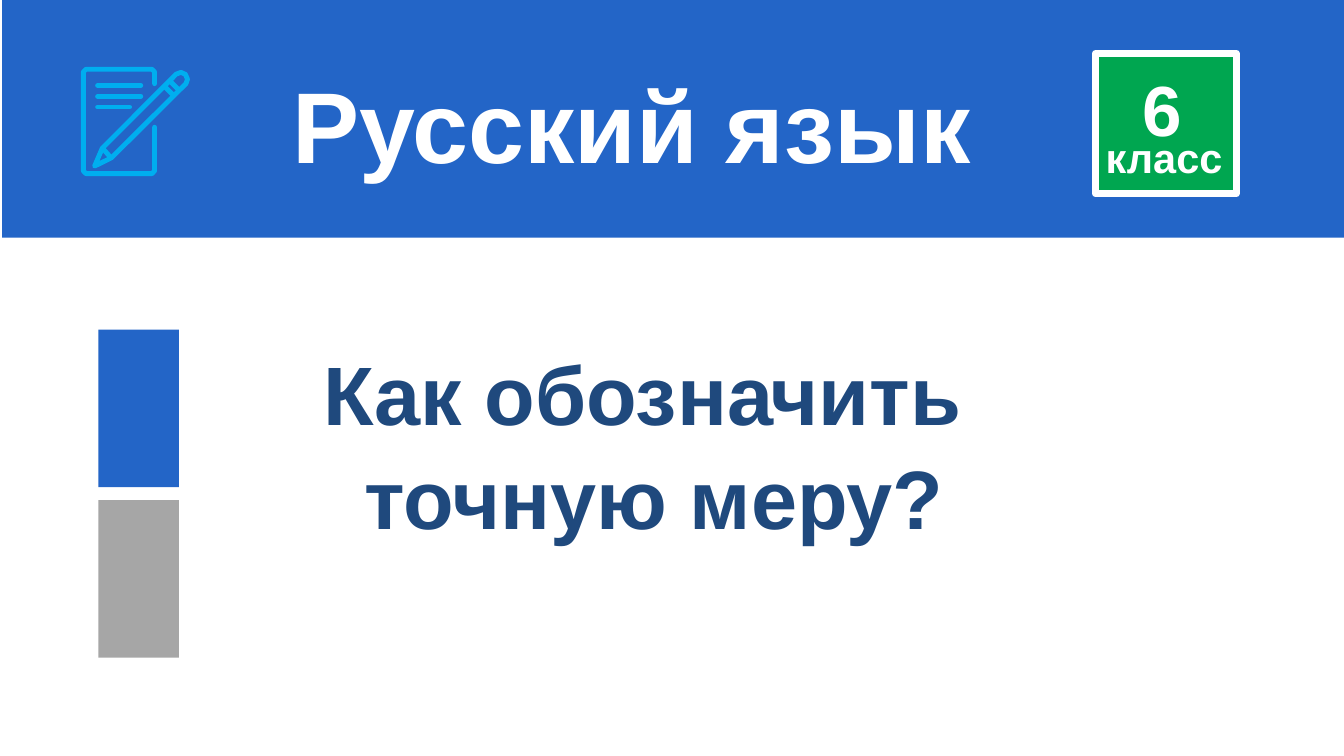
from lxml import etree
from pptx import Presentation
from pptx import util as u
from pptx.dml import color
from pptx.enum import shapes, text
from pptx.oxml import ns

Pt = u.Pt
WIDE, HIGH = 454.3, 255.6
BLUE, NAVY, GREEN, GREY = "2365C7", "1F497D", "00A650", "A6A6A6"
WHITE, CYAN = "FFFFFF", "00AEEF"

BLOCKS = [
    (0.7, 0, 453.6, 80.4, BLUE, None),
    (33.3, 111.5, 27.2, 53.3, BLUE, None),
    (33.3, 169.1, 27.2, 53.3, GREY, None),
    (370.3, 18.1, 47.6, 47.4, GREEN, WHITE),
]
TEXTS = [
    (76.3, 18, 265, 42.5, 34, WHITE, 1.1, [" Русский язык"]),
    (74.9, 113, 284.4, 69.1, 28, NAVY, 0, ["Как обозначить", " точную меру?"]),
    (383, 19.4, 19.6, 30.2, 24, WHITE, 1.2, ["6"]),
    (370.1, 42.5, 46.8, 18, 14, WHITE, 0.9, ["класс"]),
]
PAGE = [(52.3, 28.3), (52.3, 24.3), (51.4, 23.4), (29.1, 23.4), (28.2, 24.3),
        (28.2, 57.8), (29.1, 58.7), (51.4, 58.7), (52.3, 57.8), (52.3, 43)]
PENCIL = [(32, 56.2), (34.6, 50.2), (59.6, 25.1), (61.2, 24.5), (62.7, 25.2),
          (63.4, 26.8), (62.9, 28.3), (37.7, 53.4)]
BANDS = [(34.9, 50.4, 37.5, 53.3), (55.8, 29.4, 58.7, 32.3),
         (57.6, 27.6, 60.5, 30.5)]
RULES = [(33, 28.9, 47.6), (33, 32.6, 47.6), (33, 36.2, 43.8)]
STROKE = 1.65


def rgb(code):
    return color.RGBColor.from_string(code)


def trace(line, code, width):
    line.color.rgb = rgb(code)
    line.width = Pt(width)
    ln = line._get_or_add_ln()
    ln.set("cap", "rnd")
    etree.SubElement(ln, ns.qn("a:round"))


def block(slide, x, y, w, h, fill, edge):
    box = slide.shapes.add_shape(shapes.MSO_SHAPE.RECTANGLE,
                                 Pt(x), Pt(y), Pt(w), Pt(h))
    box.shadow.inherit = False
    box.fill.solid()
    box.fill.fore_color.rgb = rgb(fill)
    if edge:
        trace(box.line, edge, 2.4)
    else:
        box.line.fill.background()


def label(slide, x, y, w, h, size, code, gap, lines):
    frame = slide.shapes.add_textbox(Pt(x), Pt(y), Pt(w), Pt(h)).text_frame
    frame.word_wrap = True
    frame.margin_left = frame.margin_right = frame.margin_bottom = 0
    frame.margin_top = Pt(1.2)
    frame.text = "\n".join(lines)
    for para in frame.paragraphs:
        para.alignment = text.PP_ALIGN.CENTER
        para.line_spacing = 1.05
        para.space_before = Pt(gap)
        for run in para.runs:
            run.font.name = "Arial"
            run.font.size = Pt(size)
            run.font.bold = True
            run.font.color.rgb = rgb(code)


def outline(slide, points, close):
    dots = [(Pt(x), Pt(y)) for x, y in points]
    pen = slide.shapes.build_freeform(*dots[0], scale=1.0)
    pen.add_line_segments(dots[1:], close=close)
    form = pen.convert_to_shape()
    form.shadow.inherit = False
    form.fill.background()
    trace(form.line, CYAN, STROKE)


def stroke(slide, *ends):
    line = slide.shapes.add_connector(shapes.MSO_CONNECTOR.STRAIGHT,
                                      *[Pt(end) for end in ends])
    trace(line.line, CYAN, STROKE)
    etree.SubElement(line._element.spPr, ns.qn("a:effectLst"))


def main():
    deck = Presentation()
    deck.slide_width, deck.slide_height = Pt(WIDE), Pt(HIGH)
    slide = deck.slides.add_slide(deck.slide_layouts[6])
    for item in BLOCKS:
        block(slide, *item)
    for item in TEXTS:
        label(slide, *item)
    outline(slide, PAGE, False)
    outline(slide, PENCIL, True)
    for band in BANDS:
        stroke(slide, *band)
    for left, top, right in RULES:
        stroke(slide, left, top, right, top)
    deck.save("out.pptx")


if __name__ == "__main__":
    main()
